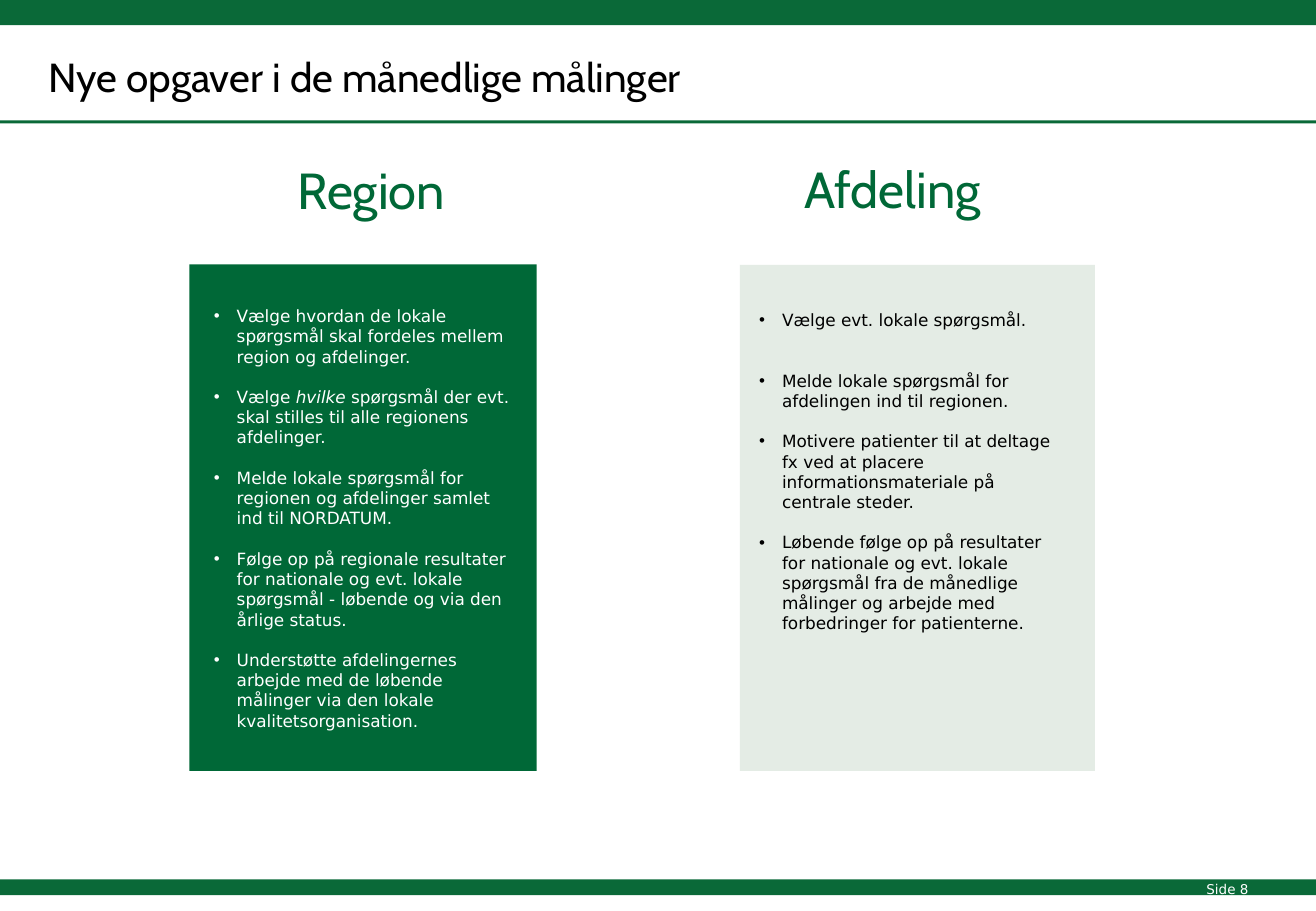
from dataclasses import dataclass

from lxml import etree
from pptx import Presentation
from pptx import util as u
from pptx.dml.color import RGBColor
from pptx.enum import shapes, text
from pptx.oxml import ns


@dataclass(frozen=True)
class Theme:
    bar: str = "0A6938"
    green: str = "006837"
    pale: str = "E4ECE5"
    white: str = "FFFFFF"
    black: str = "000000"
    heading_font: str = "Cabin"
    body_font: str = "DejaVu Sans"
    title_size: int = 24
    heading_size: int = 30
    body_size: int = 10
    line_pitch: int = 12
    page_size: int = 8


theme = Theme()
presentation = Presentation()
presentation.slide_width = u.Cm(27.51)
presentation.slide_height = u.Cm(19.05)
slide = presentation.slides.add_slide(presentation.slide_layouts[6])


def add_text_frame(left, top, width, height):
    box = slide.shapes.add_textbox(u.Cm(left), u.Cm(top), u.Cm(width), u.Cm(height))
    box.text_frame.word_wrap = True
    return box.text_frame


def add_run(paragraph, wording, font_name, size, color, italic=False):
    run = paragraph.add_run()
    run.text = wording
    run.font.name = font_name
    run.font.size = u.Pt(size)
    run.font.italic = italic
    run.font.color.rgb = RGBColor.from_string(color)


rectangles = [
    (0, 18.39, 27.51, 0.33, theme.bar),
    (0, 0, 27.51, 0.53, theme.bar),
    (0, 2.52, 27.51, 0.06, theme.bar),
    (3.96, 5.53, 7.26, 10.59, theme.green),
    (15.47, 5.54, 7.42, 10.58, theme.pale),
]
for left, top, width, height, color in rectangles:
    shape = slide.shapes.add_shape(
        shapes.MSO_SHAPE.RECTANGLE, u.Cm(left), u.Cm(top), u.Cm(width), u.Cm(height)
    )
    shape.shadow.inherit = False
    shape.fill.solid()
    shape.fill.fore_color.rgb = RGBColor.from_string(color)
    shape.line.fill.background()

labels = [
    ("Nye opgaver i de månedlige målinger", (0.76, 0.97, 17.6, 1.27),
     theme.heading_font, theme.title_size, theme.black),
    ("Region", (5.97, 3.2, 7.21, 1.55),
     theme.heading_font, theme.heading_size, theme.green),
    ("Afdeling", (16.56, 3.18, 7.21, 1.55),
     theme.heading_font, theme.heading_size, theme.green),
    ("Side 8", (24.97, 18.29, 1.6, 0.61),
     theme.body_font, theme.page_size, theme.white),
]
for wording, place, font_name, size, color in labels:
    frame = add_text_frame(*place)
    add_run(frame.paragraphs[0], wording, font_name, size, color)

region_tasks = [
    (0, ["Vælge hvordan de lokale spørgsmål skal fordeles mellem region og afdelinger."]),
    (1, ["Vælge ", "hvilke", " spørgsmål der evt. skal stilles til alle regionens afdelinger."]),
    (1, ["Melde lokale spørgsmål for regionen og afdelinger samlet ind til NORDATUM."]),
    (1, ["Følge op på regionale resultater for nationale og evt. lokale spørgsmål - "
         "løbende og via den årlige status."]),
    (1, ["Understøtte afdelingernes arbejde med de løbende målinger via den lokale "
         "kvalitetsorganisation."]),
]
department_tasks = [
    (0, ["Vælge evt. lokale spørgsmål."]),
    (2, ["Melde lokale spørgsmål for afdelingen ind til regionen."]),
    (1, ["Motivere patienter til at deltage fx ved at placere informationsmateriale "
         "på centrale steder."]),
    (1, ["Løbende følge op på resultater for nationale og evt. lokale spørgsmål fra de "
         "månedlige målinger og arbejde med forbedringer for patienterne."]),
]
task_lists = [
    (region_tasks, (4.22, 6.27, 6.76, 10.08), theme.white),
    (department_tasks, (15.62, 6.35, 6.65, 7.5), theme.black),
]
for tasks, place, color in task_lists:
    frame = add_text_frame(*place)
    for number, (gap_lines, pieces) in enumerate(tasks):
        paragraph = frame.add_paragraph() if number else frame.paragraphs[0]
        properties = paragraph._p.get_or_add_pPr()
        properties.set("marL", str(u.Cm(0.48)))
        properties.set("indent", str(-u.Cm(0.48)))
        bullet_font = etree.SubElement(properties, ns.qn("a:buFont"))
        bullet_font.set("typeface", "Arial")
        bullet = etree.SubElement(properties, ns.qn("a:buChar"))
        bullet.set("char", "•")
        paragraph.alignment = text.PP_ALIGN.LEFT
        paragraph.line_spacing = u.Pt(theme.line_pitch)
        if gap_lines:
            paragraph.space_before = u.Pt(gap_lines * theme.line_pitch)
        for piece in pieces:
            add_run(paragraph, piece, theme.body_font, theme.body_size, color,
                    italic=piece == "hvilke")

presentation.save("out.pptx")
